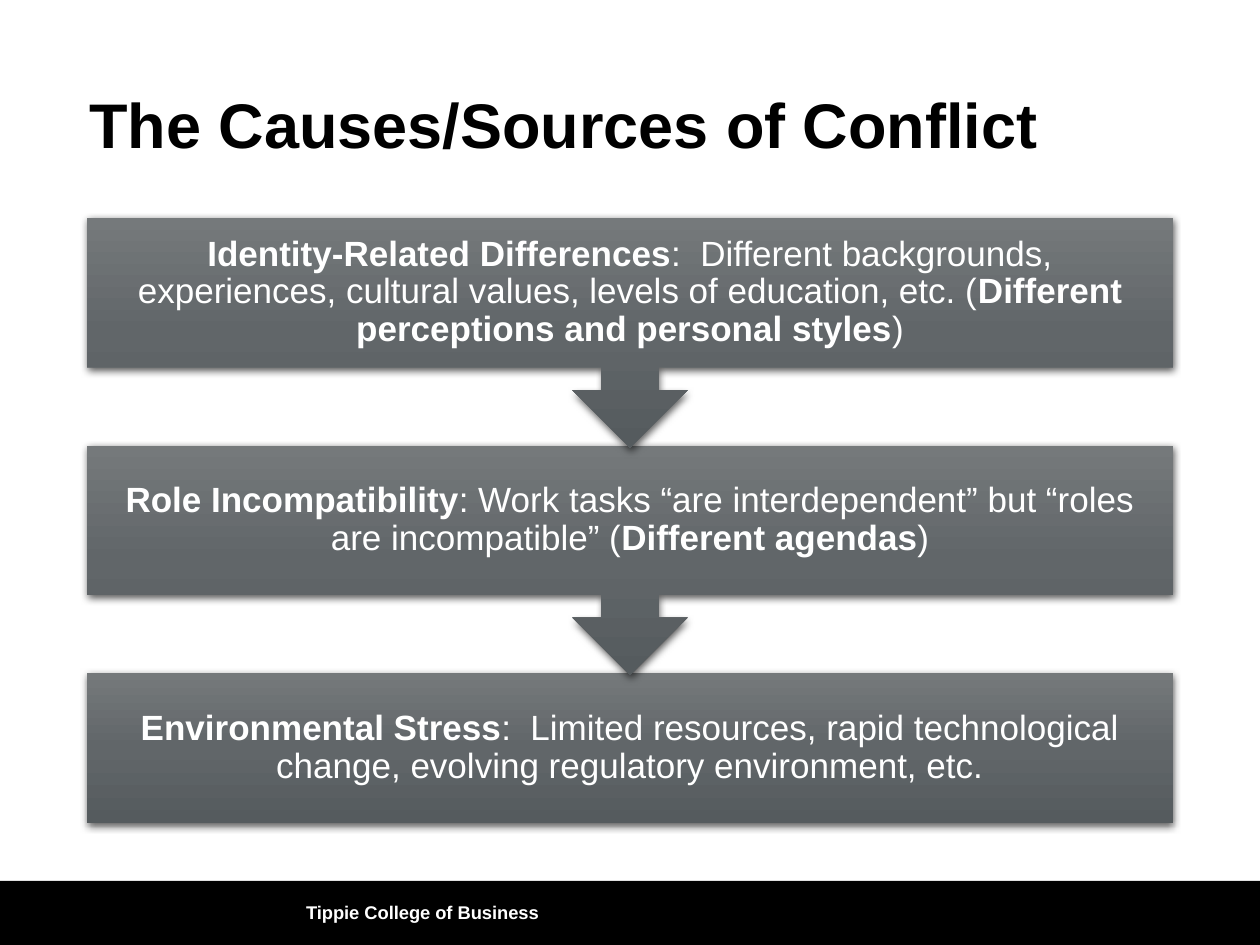
from lxml.etree import SubElement
from pptx import Presentation
from pptx.dml.color import RGBColor
from pptx.enum.shapes import MSO_SHAPE
from pptx.enum.text import MSO_ANCHOR, PP_ALIGN
from pptx.oxml import parse_xml
from pptx.oxml.ns import nsdecls, qn
from pptx.util import Pt

BLACK = RGBColor(0x00, 0x00, 0x00)
WHITE = RGBColor(0xFF, 0xFF, 0xFF)
GRADIENT = [
    (0, RGBColor(0x75, 0x79, 0x7B)),
    (50, RGBColor(0x61, 0x66, 0x69)),
    (100, RGBColor(0x55, 0x5B, 0x5E)),
]

BOX_LEFT, BOX_WIDTH, BOX_HEIGHT = 49.7, 620.6, 85.5
CALLOUT_HEIGHT = 131.2
FIRST_TOP, STEP = 124.6, 130

# Each cause is a list of (text, bold) runs, from top to bottom.
CAUSES = [
    [("Identity-Related Differences", True),
     (":  Different backgrounds, experiences, cultural values, "
      "levels of education, etc. (", False),
     ("Different perceptions and personal styles", True),
     (")", False)],
    [("Role Incompatibility", True),
     (": Work tasks “are interdependent” but “roles are incompatible” (", False),
     ("Different agendas", True),
     (")", False)],
    [("Environmental Stress", True),
     (":  Limited resources, rapid technological change, "
      "evolving regulatory environment, etc.", False)],
]


def add_run(paragraph, text, size, color, bold):
    run = paragraph.add_run()
    run.text = text
    run.font.name = "Arial"
    run.font.size = Pt(size)
    run.font.color.rgb = color
    run.font.bold = bold


def style_box(shape):
    """Give the shape a vertical three-stop gradient, no line and a soft shadow."""
    properties = shape._element.spPr
    stops = "".join(
        f'<a:gs pos="{position * 1000}"><a:srgbClr val="{color}"/></a:gs>'
        for position, color in GRADIENT)
    properties.append(parse_xml(
        f'<a:gradFill {nsdecls("a")} rotWithShape="1"><a:gsLst>{stops}</a:gsLst>'
        '<a:lin ang="5400000" scaled="0"/></a:gradFill>'))
    shape.line.fill.background()
    shape.shadow.inherit = False
    shadow = SubElement(
        properties.find(qn("a:effectLst")), qn("a:outerShdw"),
        blurRad=str(Pt(4.5)), dist=str(Pt(1.5)), dir="5400000", rotWithShape="0")
    shadow_color = SubElement(shadow, qn("a:srgbClr"), val=str(BLACK))
    SubElement(shadow_color, qn("a:alpha"), val="63000")


presentation = Presentation()
presentation.slide_width = Pt(720)
presentation.slide_height = Pt(540)
slide = presentation.slides.add_slide(presentation.slide_layouts[5])

# Title
title = slide.shapes.title
title.left, title.top, title.width, title.height = Pt(43.9), Pt(38.9), Pt(620.6), Pt(68.4)
title.text_frame.vertical_anchor = MSO_ANCHOR.MIDDLE
title.text_frame.word_wrap = True
paragraph = title.text_frame.paragraphs[0]
paragraph.alignment = PP_ALIGN.LEFT
paragraph.line_spacing = 0.9
add_run(paragraph, "The Causes/Sources of Conflict", 36, BLACK, True)

# Footer
footer_bar = slide.shapes.add_shape(
    MSO_SHAPE.RECTANGLE, Pt(0), Pt(503.3), Pt(720), Pt(36.7))
footer_bar.fill.solid()
footer_bar.fill.fore_color.rgb = BLACK
footer_bar.line.fill.background()
footer_bar.shadow.inherit = False

footer = slide.shapes.add_textbox(Pt(167.8), Pt(506.9), Pt(493.9), Pt(28.8))
footer.text_frame.word_wrap = True
footer.text_frame.vertical_anchor = MSO_ANCHOR.MIDDLE
add_run(footer.text_frame.paragraphs[0], "Tippie College of Business", 10.5, WHITE, True)

# Causes, stacked from the bottom up so each arrow tip overlaps the box below it
for index, runs in reversed(list(enumerate(CAUSES))):
    is_last = index == len(CAUSES) - 1
    box = slide.shapes.add_shape(
        MSO_SHAPE.RECTANGLE if is_last else MSO_SHAPE.DOWN_ARROW_CALLOUT,
        Pt(BOX_LEFT), Pt(FIRST_TOP + index * STEP),
        Pt(BOX_WIDTH), Pt(BOX_HEIGHT if is_last else CALLOUT_HEIGHT))
    style_box(box)

    frame = box.text_frame
    frame.word_wrap = True
    frame.vertical_anchor = MSO_ANCHOR.MIDDLE
    frame.margin_left = frame.margin_right = Pt(11.2)
    frame.margin_top = frame.margin_bottom = Pt(11.2)
    paragraph = frame.paragraphs[0]
    paragraph.alignment = PP_ALIGN.CENTER
    paragraph.line_spacing = 0.9
    for text, bold in runs:
        add_run(paragraph, text, 20, WHITE, bold)

presentation.save("out.pptx")
